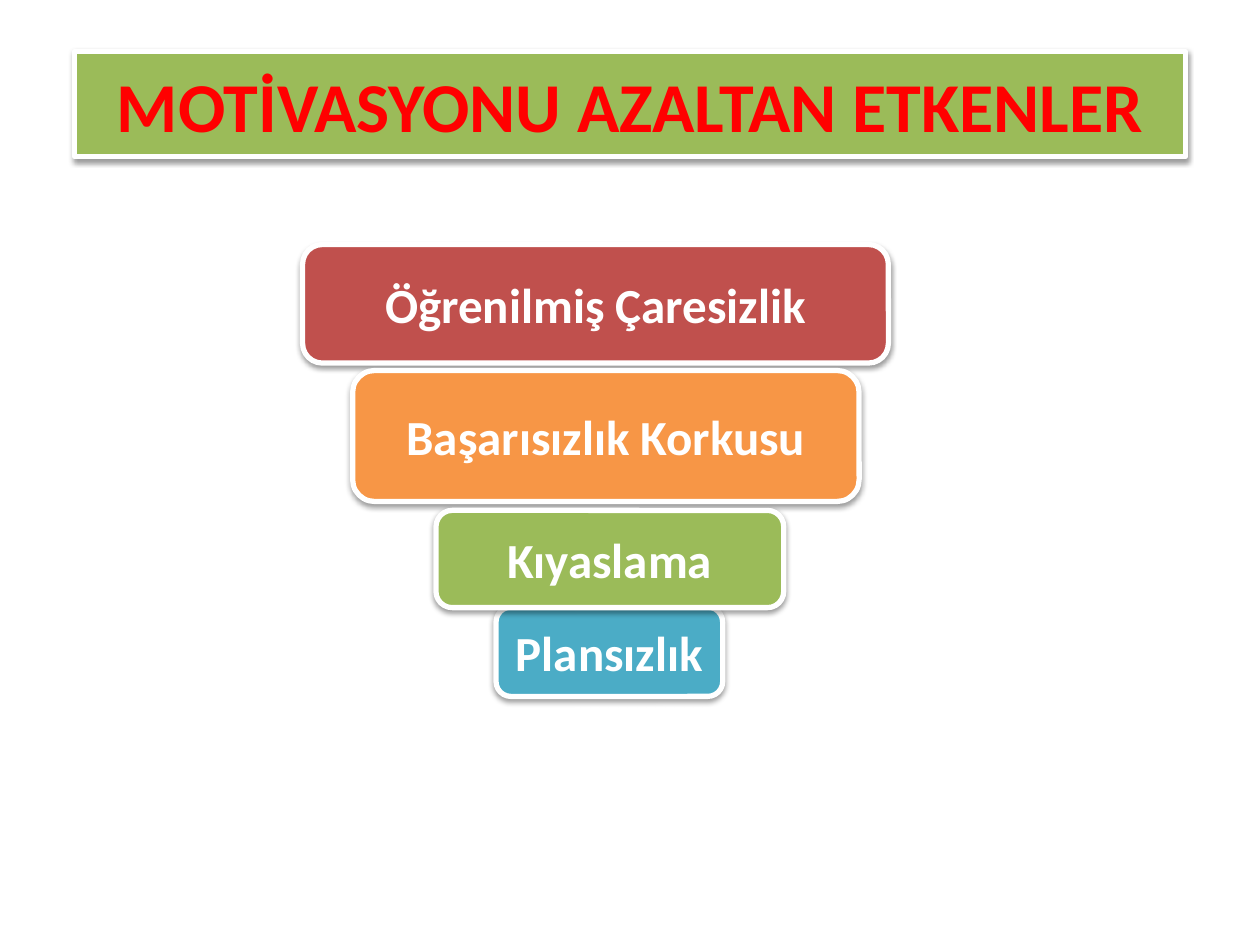
from dataclasses import dataclass

from lxml import etree
from pptx import Presentation
from pptx import util as u
from pptx.dml.color import RGBColor
from pptx.enum import shapes, text
from pptx.oxml import ns


@dataclass(frozen=True)
class Theme:
    font: str = "Calibri"
    title_size: int = 40
    step_size: int = 28
    border_width: int = 3
    white: str = "FFFFFF"
    red: str = "FF0000"
    brick: str = "C0504D"
    orange: str = "F79646"
    green: str = "9BBB59"
    teal: str = "4BACC6"


THEME = Theme()


def add_element(parent, tag, **attributes):
    return etree.SubElement(parent, ns.qn(tag), attributes)


def style_box(box, fill):
    """Give a box its fill, white border and soft shadow below."""
    box.fill.solid()
    box.fill.fore_color.rgb = RGBColor.from_string(fill)
    box.line.color.rgb = RGBColor.from_string(THEME.white)
    box.line.width = u.Pt(THEME.border_width)
    box.shadow.inherit = False
    effects = box.element.spPr.find(ns.qn("a:effectLst"))
    shadow = add_element(effects, "a:outerShdw", blurRad="40000", dist="20000",
                         dir="5400000", rotWithShape="0")
    color = add_element(shadow, "a:srgbClr", val="000000")
    add_element(color, "a:alpha", val="38000")


def write_label(box, label, size, color):
    """Write one centred bold line and return its run."""
    frame = box.text_frame
    frame.text = label
    frame.word_wrap = True
    frame.vertical_anchor = text.MSO_ANCHOR.MIDDLE
    para = frame.paragraphs[0]
    para.alignment = text.PP_ALIGN.CENTER
    span = para.runs[0]
    span.font.name = THEME.font
    span.font.size = u.Pt(size)
    span.font.bold = True
    span.font.color.rgb = RGBColor.from_string(color)
    return span


def outline_text(span, color, width):
    properties = span.font._element if hasattr(span.font, "_element") else span._r.get_or_add_rPr()
    line = etree.Element(ns.qn("a:ln"), {"w": str(int(u.Pt(width)))})
    fill = add_element(line, "a:solidFill")
    add_element(fill, "a:srgbClr", val=color)
    properties.insert(0, line)


def set_title(page, label):
    title = page.shapes.title
    title.left, title.top = u.Cm(1.5), u.Cm(1.12)
    title.width, title.height = u.Cm(22.4), u.Cm(1.96)
    style_box(title, THEME.green)
    span = write_label(title, label, THEME.title_size, THEME.red)
    outline_text(span, THEME.white, 1.45)
    title.text_frame.auto_size = text.MSO_AUTO_SIZE.SHAPE_TO_FIT_TEXT


def add_step(page, label, fill, left, top, width, height):
    box = page.shapes.add_shape(
        shapes.MSO_SHAPE.ROUNDED_RECTANGLE,
        u.Cm(left), u.Cm(top), u.Cm(width), u.Cm(height))
    style_box(box, fill)
    write_label(box, label, THEME.step_size, THEME.white)


def main():
    deck = Presentation()
    deck.slide_width, deck.slide_height = u.Cm(25.4), u.Cm(19.05)
    page = deck.slides.add_slide(deck.slide_layouts[5])

    # Title banner
    set_title(page, "MOTİVASYONU AZALTAN ETKENLER")

    # Narrowing steps; the lowest lies behind the one above it
    steps = [
        ("Plansızlık", THEME.teal, 10, 12.24, 4.57, 1.8),
        ("Öğrenilmiş Çaresizlik", THEME.brick, 6.1, 4.93, 11.81, 2.39),
        ("Başarısızlık Korkusu", THEME.orange, 7.11, 7.47, 10.21, 2.64),
        ("Kıyaslama", THEME.green, 8.79, 10.29, 7.01, 1.96),
    ]
    for step in steps:
        add_step(page, *step)

    deck.save("out.pptx")


if __name__ == "__main__":
    main()
